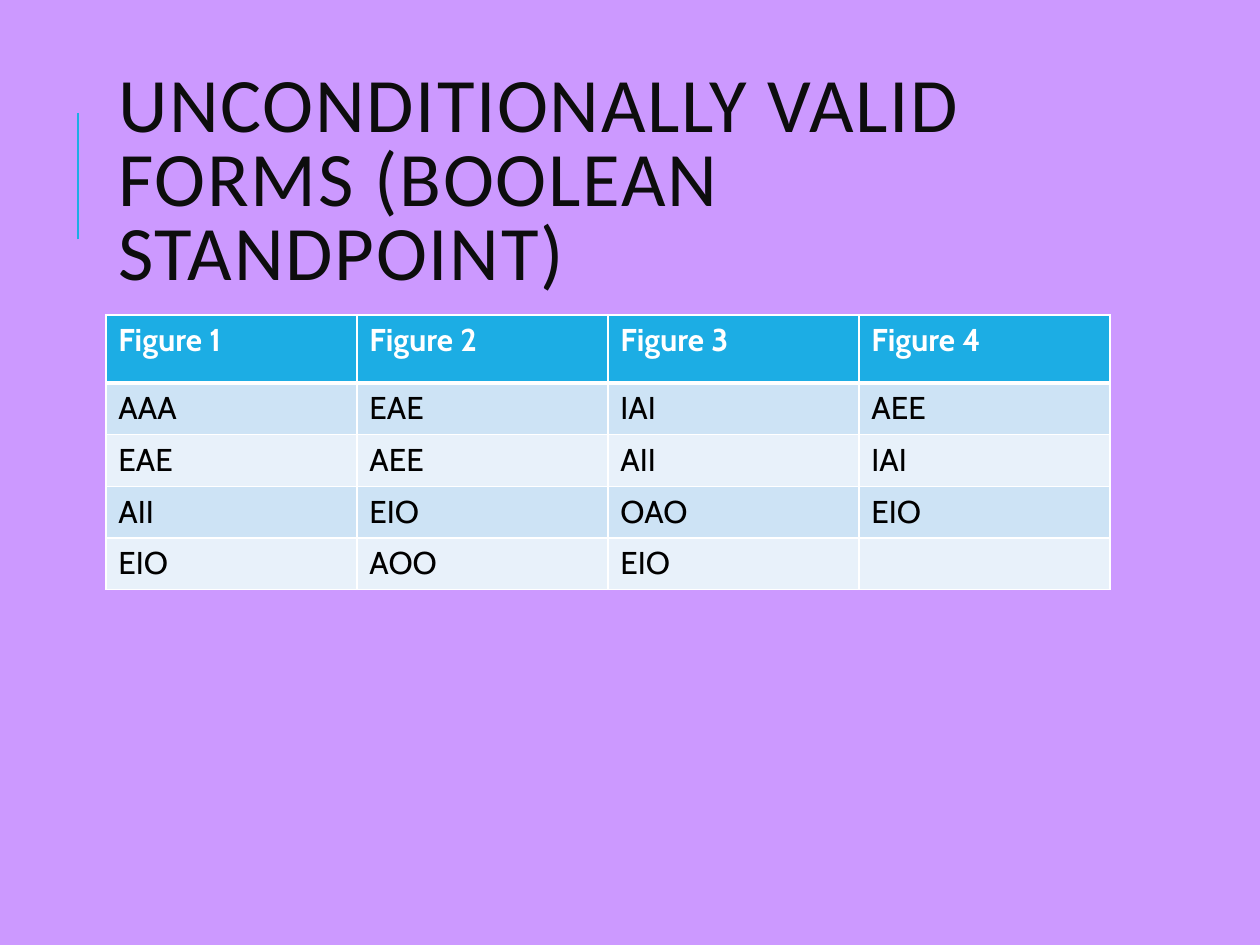
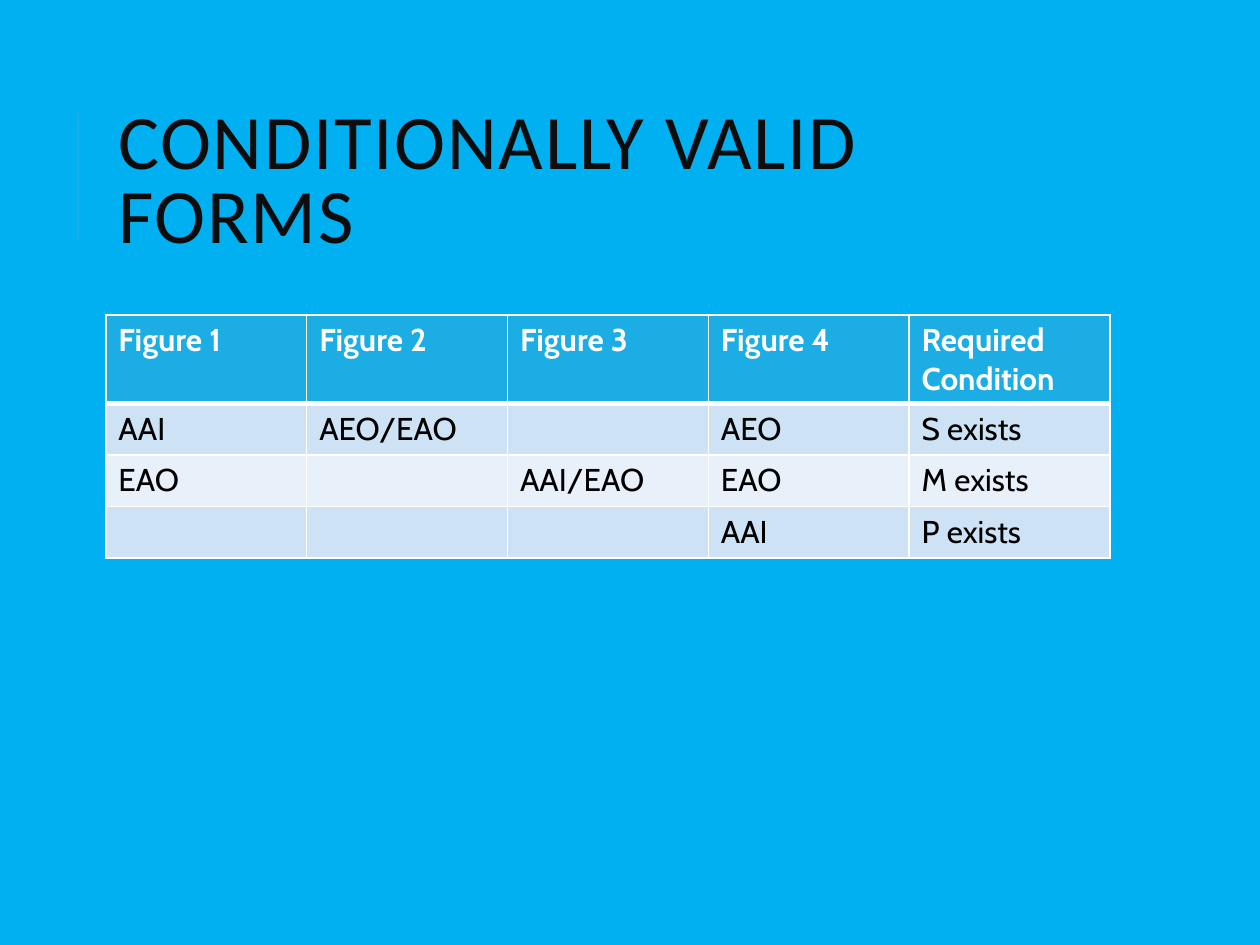
from lxml import etree
from pptx import Presentation
from pptx.dml.color import RGBColor
from pptx.enum.shapes import MSO_CONNECTOR
from pptx.enum.text import MSO_ANCHOR
from pptx.oxml.ns import qn
from pptx.util import Inches, Pt

STRAIGHT = MSO_CONNECTOR.STRAIGHT
MIDDLE = MSO_ANCHOR.MIDDLE

# Shared style
ACCENT, WHITE, BLACK, TITLE_INK = "1CADE4", "FFFFFF", "000000", "0D0D0D"
BANDS = ("CDE3F5", "E8F1FA")
TITLE_FONT, TABLE_FONT = "Calibri", "Cabin"

# Shared grid, in inches
SLIDE_W, SLIDE_H = 10, 7.5
CONTENT_LEFT, CONTENT_W = 0.84, 7.97
TITLE_TOP, TITLE_H = 0.64, 1.64
RULE_X, RULE_TOP, RULE_BOTTOM = 0.62, 0.9, 1.9
TABLE_TOP, BODY_ROW_H = 2.5, 0.41
THIN, THICK = 1, 3

# Slide content; an empty string is an empty cell
SLIDES = [
    {
        "background": "CC99FF",
        "title": "UNCONDITIONALLY VALID FORMS (BOOLEAN STANDPOINT)",
        "header_height": 0.54,
        "rows": [
            ["Figure 1", "Figure 2", "Figure 3", "Figure 4"],
            ["AAA", "EAE", "IAI", "AEE"],
            ["EAE", "AEE", "AII", "IAI"],
            ["AII", "EIO", "OAO", "EIO"],
            ["EIO", "AOO", "EIO", ""],
        ],
    },
    {
        "background": "00B0F0",
        "title": "CONDITIONALLY VALID FORMS",
        "header_height": 0.7,
        "rows": [
            ["Figure 1", "Figure 2", "Figure 3", "Figure 4", "Required Condition"],
            ["AAI", "AEO/EAO", "", "AEO", "S exists"],
            ["EAO", "", "AAI/EAO", "EAO", "M exists"],
            ["", "", "", "AAI", "P exists"],
        ],
    },
]


def rgb(hex_colour):
    return RGBColor.from_string(hex_colour)


def paint(fill, colour):
    fill.solid()
    fill.fore_color.rgb = rgb(colour)


def add_run(paragraph, text, font, size, colour, bold=False):
    run = paragraph.add_run()
    run.text = text
    run.font.name = font
    run.font.size = Pt(size)
    run.font.bold = bold
    run.font.color.rgb = rgb(colour)
    return run


def add_accent_rule(slide):
    x = Inches(RULE_X)
    rule = slide.shapes.add_connector(
        STRAIGHT, x, Inches(RULE_BOTTOM), x, Inches(RULE_TOP))
    rule.line.color.rgb = rgb(ACCENT)
    rule.line.width = Pt(1.5)
    etree.SubElement(rule._element.spPr, qn("a:effectLst"))


def add_title(slide, text):
    title = slide.shapes.add_textbox(
        Inches(CONTENT_LEFT), Inches(TITLE_TOP), Inches(CONTENT_W), Inches(TITLE_H))
    frame = title.text_frame
    frame.word_wrap = True
    frame.vertical_anchor = MIDDLE
    paragraph = frame.paragraphs[0]
    paragraph.line_spacing = 0.8
    run = add_run(paragraph, text, TITLE_FONT, 44, TITLE_INK)
    run.font._element.set("spc", "100")  # letter spacing of 1 pt


def set_borders(cell, top, bottom):
    properties = cell._tc.get_or_add_tcPr()
    for side, width in (("L", THIN), ("R", THIN), ("T", top), ("B", bottom)):
        border = etree.SubElement(properties, qn(f"a:ln{side}"), w=str(Pt(width)))
        fill = etree.SubElement(border, qn("a:solidFill"))
        etree.SubElement(fill, qn("a:srgbClr"), val=WHITE)


def add_forms_table(slide, rows, header_height):
    heights = [header_height] + [BODY_ROW_H] * (len(rows) - 1)
    columns = len(rows[0])
    table = slide.shapes.add_table(
        len(rows), columns, Inches(CONTENT_LEFT), Inches(TABLE_TOP),
        Inches(CONTENT_W), Inches(sum(heights))).table
    table.first_row = table.horz_banding = False
    for column in table.columns:
        column.width = Inches(CONTENT_W / columns)

    for r, (texts, height) in enumerate(zip(rows, heights)):
        table.rows[r].height = Inches(height)
        is_header = r == 0
        for c, text in enumerate(texts):
            cell = table.cell(r, c)
            # The thick line lies between the header and the first body row
            set_borders(cell, top=THICK if r == 1 else THIN,
                        bottom=THICK if is_header else THIN)
            paint(cell.fill, ACCENT if is_header else BANDS[(r - 1) % 2])
            if text:
                add_run(cell.text_frame.paragraphs[0], text, TABLE_FONT, 18,
                        WHITE if is_header else BLACK, bold=is_header)


def main():
    deck = Presentation()
    deck.slide_width, deck.slide_height = Inches(SLIDE_W), Inches(SLIDE_H)
    blank = deck.slide_layouts[6]
    for content in SLIDES:
        slide = deck.slides.add_slide(blank)
        paint(slide.background.fill, content["background"])
        add_accent_rule(slide)
        add_title(slide, content["title"])
        add_forms_table(slide, content["rows"], content["header_height"])
    deck.save("out.pptx")


if __name__ == "__main__":
    main()
